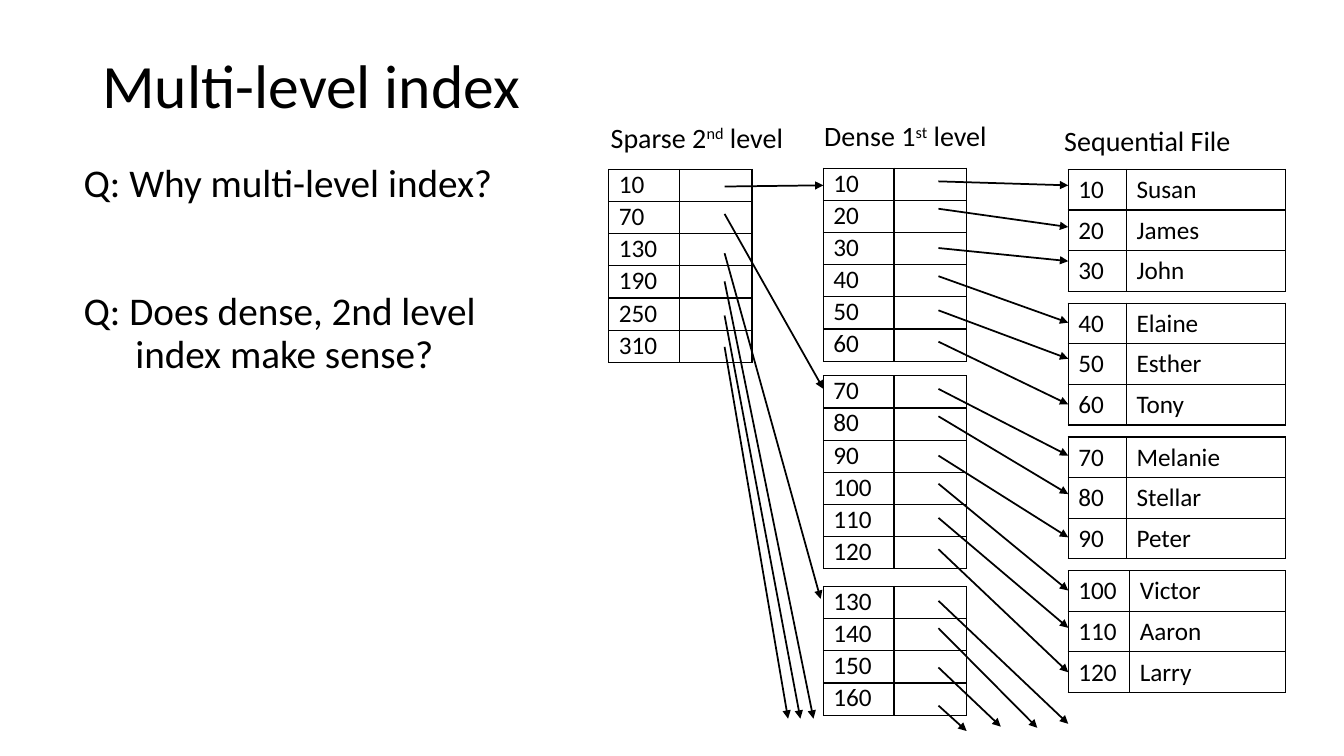
import pptx
import pptx.dml.color
import pptx.enum.shapes
import pptx.enum.text
import pptx.oxml
import pptx.oxml.ns
import pptx.util
from pptx.util import Cm

BLACK = "000000"
NAMESPACE = pptx.oxml.ns.nsdecls("a")
SEQUENTIAL_LEFT = 26.92
DENSE_LEFT = 20.75
SPARSE_LEFT = 15.34


def style_text(para, size):
    for span in para.runs:
        span.font.name = "Calibri"
        span.font.size = pptx.util.Pt(size)
        span.font.color.rgb = pptx.dml.color.RGBColor.from_string(BLACK)


def add_table(page, left, top, widths, row_height, rows, margin):
    frame = page.shapes.add_table(
        len(rows), len(widths), Cm(left), Cm(top), Cm(sum(widths)), Cm(row_height * len(rows))
    )
    table = frame.table
    table.first_row = False
    table.horz_banding = False
    for column, width in zip(table.columns, widths):
        column.width = Cm(width)
    for row, values in zip(table.rows, rows):
        row.height = Cm(row_height)
        for cell, value in zip(row.cells, values):
            cell.margin_top = cell.margin_bottom = Cm(margin)
            para = cell.text_frame.paragraphs[0]
            para.text = value
            para.font.size = pptx.util.Pt(18)
            style_text(para, 18)
            properties = cell._tc.get_or_add_tcPr()
            for side in ("lnL", "lnR", "lnT", "lnB"):
                properties.append(pptx.oxml.parse_xml(
                    f'<a:{side} {NAMESPACE} w="12700"><a:solidFill>'
                    f'<a:srgbClr val="{BLACK}"/></a:solidFill></a:{side}>'
                ))
            cell.fill.background()


deck = pptx.Presentation()
deck.slide_width = Cm(33.87)
deck.slide_height = Cm(19.05)
page = deck.slides.add_slide(deck.slide_layouts[6])

title = page.shapes.add_textbox(Cm(2.33), Cm(0.84), Cm(29.21), Cm(2.77))
title.text_frame.word_wrap = True
title.text_frame.vertical_anchor = pptx.enum.text.MSO_ANCHOR.MIDDLE
title.text_frame.text = "Multi-level index"
title.text_frame.paragraphs[0].line_spacing = 0.9
style_text(title.text_frame.paragraphs[0], 44)

questions = page.shapes.add_textbox(Cm(1.86), Cm(4.01), Cm(29.21), Cm(13.26))
questions.text_frame.word_wrap = True
questions.text_frame.text = "Q: Why multi-level index?\nQ: Does dense, 2nd level\vindex make sense?"
for para in questions.text_frame.paragraphs:
    para.line_spacing = 0.9
    indents = para._p.get_or_add_pPr()
    indents.set("marL", str(Cm(1.3)))
    indents.set("indent", str(Cm(-1.3)))
    style_text(para, 28)
questions.text_frame.paragraphs[1].space_before = pptx.util.Pt(61)

headings = [
    (15.14, 2.9, 4.95, ["Sparse 2", "nd", " level"]),
    (20.52, 2.87, 4.7, ["Dense 1", "st", " level"]),
    (26.57, 3, 4.75, ["Sequential File"]),
]
for left, top, width, pieces in headings:
    box = page.shapes.add_textbox(Cm(left), Cm(top), Cm(width), Cm(1.12))
    box.text_frame.word_wrap = False
    para = box.text_frame.paragraphs[0]
    for piece in pieces:
        para.add_run().text = piece
    style_text(para, 20)
    if len(pieces) > 1:
        para.runs[1]._r.get_or_add_rPr().set("baseline", "30000")

names = ["Susan", "James", "John", "Elaine", "Esther", "Tony",
         "Melanie", "Stellar", "Peter", "Victor", "Aaron", "Larry"]
records = [(str(10 * number), name) for number, name in enumerate(names, 1)]
for block in range(4):
    widths = (1.55, 3.93) if block == 3 else (1.47, 4.01)
    add_table(page, SEQUENTIAL_LEFT, 4.27 + 3.37 * block, widths, 1.02,
              records[3 * block:3 * block + 3], 0.13)

index_blocks = [
    (SPARSE_LEFT, 4.27, range(10, 311, 60)),
    (DENSE_LEFT, 4.24, range(10, 61, 10)),
    (DENSE_LEFT, 9.47, range(70, 121, 10)),
    (DENSE_LEFT, 14.78, range(130, 161, 10)),
]
for left, top, keys in index_blocks:
    add_table(page, left, top, (1.78, 1.83), 0.81, [(str(key), "") for key in keys], 0)

start_heights = [0, 0.69, 1.68, 2.39, 3.25, 4.04]
arrow_groups = [
    (18.26, 4.7, start_heights, [(DENSE_LEFT, 4.67), (DENSE_LEFT, 9.8), (20.68, 15.09),
                                 (20.5, 18.11), (20.17, 18.11), (19.86, 18.11)]),
    (23.65, 4.57, start_heights,
     [(SEQUENTIAL_LEFT, end) for end in (4.67, 5.72, 6.58, 8.13, 9.04, 10.19)]),
    (23.65, 9.8, start_heights,
     [(SEQUENTIAL_LEFT, end) for end in (11.48, 12.45, 13.54, 14.88, 15.82, 16.94)]),
    (23.65, 15.14, start_heights[:3] + [2.64],
     [(SEQUENTIAL_LEFT, 18.24), (26.14, 18.34), (25.22, 18.31), (24.36, 18.42)]),
]
for start_left, start_top, heights, ends in arrow_groups:
    for height, (end_left, end_top) in zip(heights, ends):
        arrow = page.shapes.add_connector(
            pptx.enum.shapes.MSO_CONNECTOR.STRAIGHT,
            Cm(start_left), Cm(start_top + height), Cm(end_left), Cm(end_top)
        )
        arrow.line.width = pptx.util.Pt(1.25)
        arrow.line.color.rgb = pptx.dml.color.RGBColor.from_string(BLACK)
        arrow.line._get_or_add_ln().append(
            pptx.oxml.parse_xml(f'<a:tailEnd {NAMESPACE} type="triangle"/>'))
        arrow._element.spPr.append(pptx.oxml.parse_xml(f"<a:effectLst {NAMESPACE}/>"))

deck.save("out.pptx")
